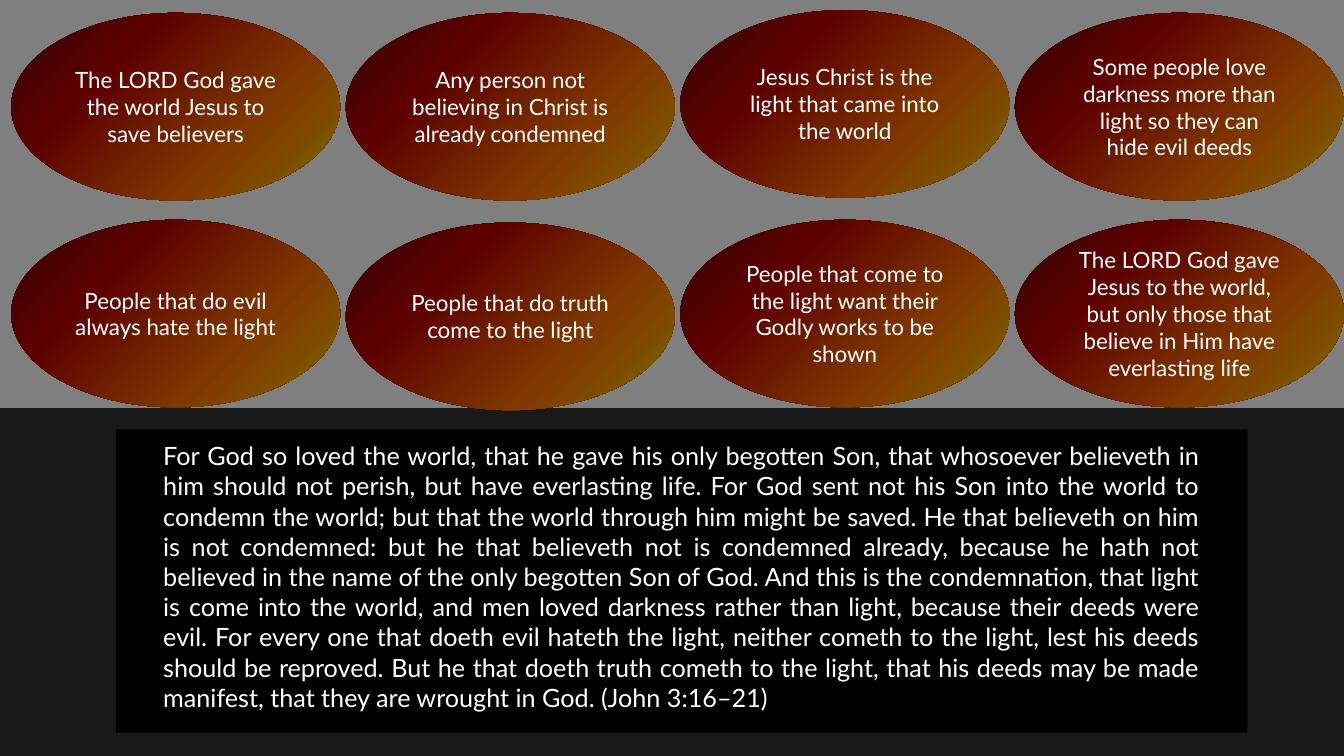
from dataclasses import dataclass

from lxml.etree import SubElement
from pptx import Presentation
from pptx.dml.color import RGBColor
from pptx.enum.shapes import MSO_SHAPE
from pptx.enum.text import MSO_ANCHOR, MSO_AUTO_SIZE, PP_ALIGN
from pptx.oxml import parse_xml
from pptx.oxml.ns import nsdecls, qn
from pptx.util import Pt


@dataclass(frozen=True)
class Theme:
    font: str = "Lato"
    text: str = "FFFFFF"
    dark: str = "000000"
    verse_size: int = 18
    oval_size: int = 16
    # Percent along the gradient, colour
    oval_stops: tuple = ((0, "320000"), (29, "5C0000"), (69, "7F3900"), (100, "7D6800"))
    oval_angle: int = 45


PAGE_WIDTH, PAGE_HEIGHT = 960, 540
OVAL_LEFT, OVAL_PITCH = 8, 239
OVAL_WIDTH, OVAL_HEIGHT = 235, 134

# Each row holds (top, statement) pairs, left to right
STATEMENT_ROWS = [
    [
        (9.2, "The LORD God gave the world Jesus to save believers"),
        (9.2, "Any person not believing in Christ is already condemned"),
        (7.2, "Jesus Christ is the light that came into the world"),
        (9.2, "Some people love darkness more than light so they can\nhide evil deeds"),
    ],
    [
        (157, "People that do evil always hate the light"),
        (159, "People that do truth come to the light"),
        (157, "People that come to the light want their Godly works to be shown"),
        (157, "The LORD God gave Jesus to the world, but only those that believe in Him "
              "have everlasting life"),
    ],
]

VERSES = (
    "For God so loved the world, that he gave his only begotten Son, that whosoever "
    "believeth in him should not perish, but have everlasting life. For God sent not his "
    "Son into the world to condemn the world; but that the world through him might be "
    "saved. He that believeth on him is not condemned: but he that believeth not is "
    "condemned already, because he hath not believed in the name of the only begotten Son "
    "of God. And this is the condemnation, that light is come into the world, and men loved "
    "darkness rather than light, because their deeds were evil. For every one that doeth "
    "evil hateth the light, neither cometh to the light, lest his deeds should be reproved. "
    "But he that doeth truth cometh to the light, that his deeds may be made manifest, that "
    "they are wrought in God. (John 3:16–21)"
)


class SlideBuilder:
    def __init__(self, page, theme):
        self.page = page
        self.theme = theme

    def shape(self, kind, left, top, width, height):
        shape = self.page.shapes.add_shape(kind, Pt(left), Pt(top), Pt(width), Pt(height))
        shape.shadow.inherit = False
        shape.line.fill.background()
        return shape

    def panel(self, left, top, width, height, opacity=100):
        """Draw a dark rectangle; opacity is in percent."""
        panel = self.shape(MSO_SHAPE.RECTANGLE, left, top, width, height)
        panel.fill.solid()
        panel.fill.fore_color.rgb = RGBColor.from_string(self.theme.dark)
        if opacity < 100:
            color = panel._element.spPr.find(qn("a:solidFill")).find(qn("a:srgbClr"))
            SubElement(color, qn("a:alpha"), val=str(opacity * 1000))

    def set_text(self, frame, text, size, alignment):
        frame.word_wrap = True
        frame.text = text
        for paragraph in frame.paragraphs:
            paragraph.alignment = alignment
            paragraph.font.name = self.theme.font
            paragraph.font.size = Pt(size)
            paragraph.font.color.rgb = RGBColor.from_string(self.theme.text)

    def oval(self, left, top, text):
        oval = self.shape(MSO_SHAPE.OVAL, left, top, OVAL_WIDTH, OVAL_HEIGHT)
        stops = "".join(
            f'<a:gs pos="{percent * 1000}"><a:srgbClr val="{color}"/></a:gs>'
            for percent, color in self.theme.oval_stops
        )
        gradient = parse_xml(
            f'<a:gradFill {nsdecls("a")} rotWithShape="1"><a:gsLst>{stops}</a:gsLst>'
            f'<a:lin ang="{self.theme.oval_angle * 60000}" scaled="0"/></a:gradFill>'
        )
        oval._element.spPr.find(qn("a:prstGeom")).addnext(gradient)
        oval.text_frame.vertical_anchor = MSO_ANCHOR.MIDDLE
        self.set_text(oval.text_frame, text, self.theme.oval_size, PP_ALIGN.CENTER)

    def verse_box(self, left, top, width, height, text):
        box = self.page.shapes.add_textbox(Pt(left), Pt(top), Pt(width), Pt(height))
        box.text_frame.auto_size = MSO_AUTO_SIZE.SHAPE_TO_FIT_TEXT
        self.set_text(box.text_frame, text, self.theme.verse_size, PP_ALIGN.JUSTIFY)


def main():
    deck = Presentation()
    deck.slide_width, deck.slide_height = Pt(PAGE_WIDTH), Pt(PAGE_HEIGHT)
    builder = SlideBuilder(deck.slides.add_slide(deck.slide_layouts[6]), Theme())

    builder.panel(0, 0, PAGE_WIDTH, PAGE_HEIGHT, opacity=50)
    builder.panel(0, 291.5, PAGE_WIDTH, 248.5, opacity=80)
    builder.panel(82.8, 306.8, 808.2, 216.5)
    builder.verse_box(109.5, 311, 754.5, 204, VERSES)

    for row in STATEMENT_ROWS:
        for column, (top, statement) in enumerate(row):
            builder.oval(OVAL_LEFT + column * OVAL_PITCH, top, statement)

    deck.save("out.pptx")


if __name__ == "__main__":
    main()
